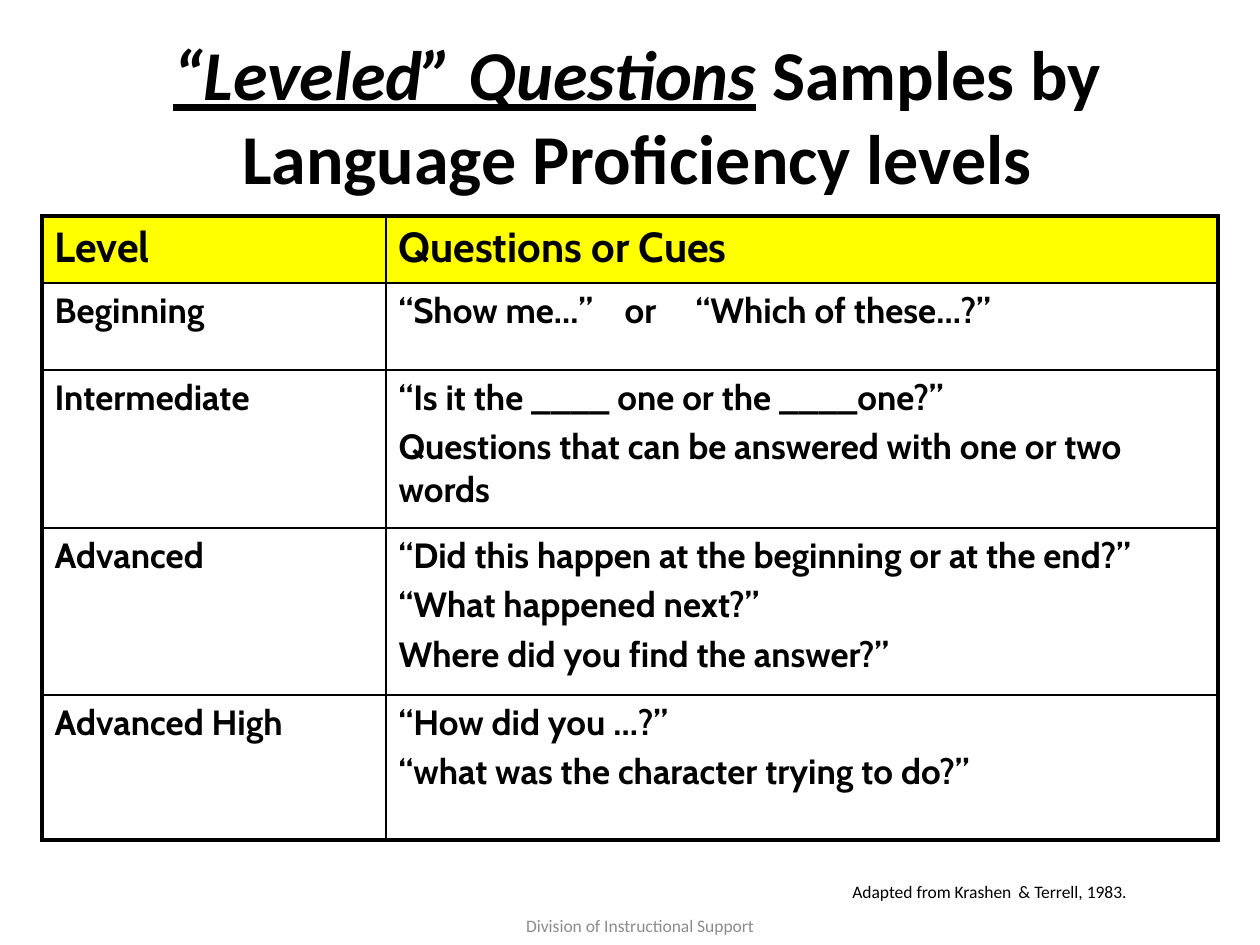
from dataclasses import dataclass

from lxml.etree import SubElement
from pptx import Presentation
from pptx.dml.color import RGBColor
from pptx.enum.text import MSO_ANCHOR as Anchor, MSO_AUTO_SIZE as AutoSize, PP_ALIGN as Align
from pptx.oxml.ns import qn
from pptx.util import Emu, Pt

PX_PER_INCH = 126


def px(length):
    return Emu(round(length * 914400 / PX_PER_INCH))


@dataclass(frozen=True)
class Theme:
    ink: str = "000000"
    muted: str = "8C8C8C"
    header_fill: str = "FFFF00"
    heading_font: str = "Calibri"
    table_font: str = "Cabin"
    title_size: int = 40
    header_size: int = 24
    cell_size: int = 20
    note_size: int = 10
    gap_size: int = 18
    paragraph_gap: int = 4
    frame_width: float = 2.25
    rule_width: float = 1


class SlideBuilder:
    def __init__(self, slide, theme):
        self.slide = slide
        self.theme = theme

    def place(self, shape, left, top, width, height):
        shape.left, shape.top = px(left), px(top)
        shape.width, shape.height = px(width), px(height)

    def run(self, paragraph, text, size, font=None, color=None, bold=False, emphasis=False):
        run = paragraph.add_run()
        run.text = text
        run.font.name = font or self.theme.heading_font
        run.font.size = Pt(size)
        run.font.bold = bold
        run.font.italic = run.font.underline = emphasis
        run.font.color.rgb = RGBColor.from_string(color or self.theme.ink)

    def title(self, parts, *box):
        shape = self.slide.shapes.title
        self.place(shape, *box)
        frame = shape.text_frame
        frame.word_wrap = True
        frame.auto_size = AutoSize.NONE
        frame.vertical_anchor = Anchor.MIDDLE
        paragraph = frame.paragraphs[0]
        paragraph.alignment = Align.CENTER
        for text, emphasis in parts:
            self.run(paragraph, text, self.theme.title_size, bold=True, emphasis=emphasis)

    def text(self, parts, *box, color=None, align=Align.LEFT, anchor=Anchor.TOP):
        shape = self.slide.shapes.add_textbox(*map(px, box))
        frame = shape.text_frame
        frame.word_wrap = True
        frame.vertical_anchor = anchor
        paragraph = frame.paragraphs[0]
        paragraph.alignment = align
        for text, size in parts:
            self.run(paragraph, text, size, color=color)

    def tab_stops(self, paragraph, stops):
        tab_list = SubElement(paragraph._p.get_or_add_pPr(), qn("a:tabLst"))
        for stop in stops:
            SubElement(tab_list, qn("a:tab"), pos=str(px(stop)), algn="l")

    def borders(self, cell, outer_sides):
        properties = cell._tc.get_or_add_tcPr()
        for side in "LRTB":
            width = self.theme.frame_width if side in outer_sides else self.theme.rule_width
            line = SubElement(properties, qn(f"a:ln{side}"), w=str(Pt(width)))
            fill = SubElement(line, qn("a:solidFill"))
            SubElement(fill, qn("a:srgbClr"), val=self.theme.ink)

    def cell(self, cell, lines, is_header, outer_sides, stops):
        theme = self.theme
        self.borders(cell, outer_sides)
        if is_header:
            cell.fill.solid()
            cell.fill.fore_color.rgb = RGBColor.from_string(theme.header_fill)
        else:
            cell.fill.background()
        frame = cell.text_frame
        for index, line in enumerate(lines):
            paragraph = frame.add_paragraph() if index else frame.paragraphs[0]
            if index:
                paragraph.space_before = Pt(theme.paragraph_gap)
            if "\t" in line:
                self.tab_stops(paragraph, stops)
            size = theme.header_size if is_header else theme.cell_size
            self.run(paragraph, line, size, font=theme.table_font, bold=True)

    def table(self, rows, left, top, widths, heights, stops):
        shape = self.slide.shapes.add_table(
            len(rows), len(widths), px(left), px(top), px(sum(widths)), px(sum(heights)))
        table = shape.table
        table.first_row = table.horz_banding = False
        for column, width in zip(table.columns, widths):
            column.width = px(width)
        last_row, last_column = len(rows) - 1, len(widths) - 1
        for r, (row, height) in enumerate(zip(rows, heights)):
            table.rows[r].height = px(height)
            for c, lines in enumerate(row):
                edges = {"T": r == 0, "B": r == last_row, "L": c == 0, "R": c == last_column}
                outer_sides = [side for side, is_outer in edges.items() if is_outer]
                self.cell(table.cell(r, c), lines, r == 0, outer_sides, stops)


LEVELS = [
    (["Level"], ["Questions or Cues"]),
    (["Beginning"], ["“Show me…”\tor\t“Which of these…?”"]),
    (["Intermediate"], ["“Is it the ____ one or the ____one?”",
                        "Questions that can be answered with one or two words"]),
    (["Advanced"], ["“Did this happen at the beginning or at the end?”",
                    "“What happened next?”",
                    "Where did you find the answer?”"]),
    (["Advanced High"], ["“How did you …?”",
                         "“what was the character trying to do?”"]),
]


def main():
    presentation = Presentation()
    presentation.slide_width, presentation.slide_height = px(1260), px(945)
    title_only = presentation.slide_layouts[5]
    theme = Theme()
    builder = SlideBuilder(presentation.slides.add_slide(title_only), theme)

    # Title
    builder.title([("“Leveled” Questions", True),
                   (" Samples by Language Proficiency levels", False)], 42, 10, 1190, 209)

    # Question samples by level
    builder.table(LEVELS, 42, 216, widths=[344, 832],
                  heights=[67, 87, 158, 167, 145], stops=[226, 297])

    # Source note
    builder.text([("Adapted from Krashen", theme.note_size), (" ", theme.gap_size),
                  ("& Terrell, 1983.", theme.note_size)], 840, 861, 372, 54)

    # Footer
    builder.text([("Division of Instructional Support", theme.note_size)], 451, 904, 378, 42,
                 color=theme.muted, align=Align.CENTER, anchor=Anchor.MIDDLE)

    presentation.save("out.pptx")


if __name__ == "__main__":
    main()
